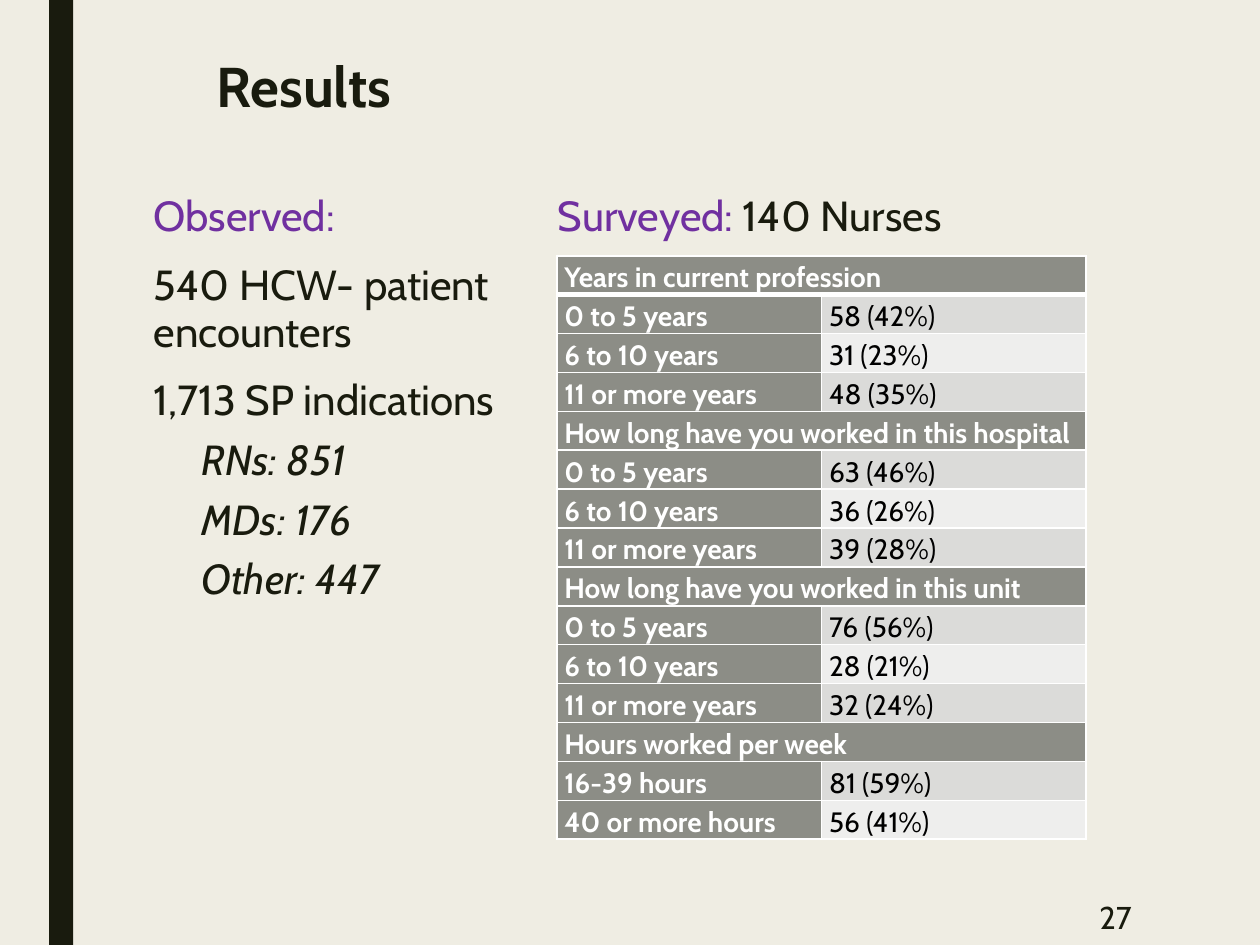
from lxml.etree import SubElement as Sub
from pptx import Presentation as Deck
from pptx.dml.color import RGBColor as RGB
from pptx.enum.shapes import MSO_SHAPE as Geo
from pptx.enum.text import MSO_ANCHOR as Anchor, PP_ALIGN as Align
from pptx.oxml.ns import qn
from pptx.util import Inches, Pt

INK, PLUM, WHITE, BLACK = "191B0E", "7030A0", "FFFFFF", "000000"
PAPER, GREY, DARK, LIGHT = "EFEDE3", "8C8D86", "DBDBD9", "EEEEED"
COLS, ROWS = 100, 75  # grid over the slide

# A row with no value is a heading across both columns
YEARS = ("0 to 5 years", "6 to 10 years", "11 or more years")
HOURS = ("16-39 hours", "40 or more hours")
GROUPS = [
    ("Years in current profession", YEARS, ("58 (42%)", "31 (23%)", "48 (35%)")),
    ("How long have you worked in this hospital", YEARS,
     ("63 (46%)", "36 (26%)", "39 (28%)")),
    ("How long have you worked in this unit", YEARS,
     ("76 (56%)", "28 (21%)", "32 (24%)")),
    ("Hours worked per week", HOURS, ("81 (59%)", "56 (41%)")),
]


def paint(target, color):
    """Give a fill one solid colour."""
    target.solid()
    target.fore_color.rgb = RGB.from_string(color)


def write(para, text, size=24, color=INK, bold=False, italic=False, font="Cabin",
          line=None, before=None, after=None, align=None, indent=0):
    """Add a run to a paragraph and set its format."""
    run = para.add_run()
    run.text = text
    run.font.name, run.font.size = font, Pt(size)
    run.font.bold, run.font.italic = bold, italic
    paint(run.font.fill, color)
    para.line_spacing, para.alignment = line, align
    para.space_before = None if before is None else Pt(before)
    para.space_after = None if after is None else Pt(after)
    if indent:
        para.level = 1
        para._p.get_or_add_pPr().set("marL", str(Inches(indent)))


def edge(cell, top=1, base=1):
    """Draw white borders, widths in points, ahead of the cell's fill."""
    props = cell._tc.get_or_add_tcPr()
    sides = (("lnL", 1), ("lnR", 1), ("lnT", top), ("lnB", base))
    for spot, (side, width) in enumerate(sides):
        line = Sub(props, qn("a:" + side), w=str(Pt(width)))
        Sub(Sub(line, qn("a:solidFill")), qn("a:srgbClr"), val=WHITE)
        props.insert(spot, line)


class Page:
    """The current slide, its grid and its text style."""
    body = dict(line=0.94, before=10, after=2)
    sub = dict(line=0.94, before=5, after=2, italic=True, indent=0.38)

    def __init__(self, deck):
        self.wide, self.high = deck.slide_width, deck.slide_height
        self.slide = deck.slides.add_slide(deck.slide_layouts[6])
        paint(self.slide.background.fill, PAPER)

    def area(self, col, row, cols, rows):
        return (round(self.wide * col / COLS), round(self.high * row / ROWS),
                round(self.wide * cols / COLS), round(self.high * rows / ROWS))

    def bar(self, *area):
        shape = self.slide.shapes.add_shape(Geo.RECTANGLE, *self.area(*area))
        shape.shadow.inherit = False
        paint(shape.fill, INK)
        shape.line.fill.background()

    def text(self, area, paras, anchor=Anchor.TOP):
        """Each paragraph is a list of (text, format) runs."""
        frame = self.slide.shapes.add_textbox(*self.area(*area)).text_frame
        frame.word_wrap, frame.vertical_anchor = True, anchor
        for num, runs in enumerate(paras):
            para = frame.add_paragraph() if num else frame.paragraphs[0]
            for words, look in runs:
                write(para, words, **look)

    def table(self, area, rows):
        table = self.slide.shapes.add_table(len(rows), 2, *self.area(*area)).table
        for num, (label, value) in enumerate(rows):
            left, right = table.cell(num, 0), table.cell(num, 1)
            shade = DARK if num % 2 else LIGHT
            for cell, fill in ((left, GREY), (right, shade if value else GREY)):
                cell.margin_left = cell.margin_right = Inches(0.06)
                cell.margin_top = cell.margin_bottom = 0
                paint(cell.fill, fill)
                edge(cell, top=3 if num == 1 else 1, base=3 if num == 0 else 1)
            write(left.text_frame.paragraphs[0], label,
                  size=16, color=WHITE, bold=True, line=1.15)
            if value:
                write(right.text_frame.paragraphs[0], value,
                      size=16, color=BLACK, line=1.15)
            else:
                left.merge(right)


def main():
    deck = Deck()
    deck.slide_width, deck.slide_height = Inches(10), Inches(7.5)
    page = Page(deck)
    body, sub = page.body, page.sub
    plum = dict(body, color=PLUM)

    # Side bar and title
    page.bar(3.9, 0, 1.9, ROWS)
    page.text((16.2, 4.2, 64.7, 7.8),
              [[("Results", dict(size=32, bold=True, line=0.89))]])

    # Observed counts
    page.text((11.2, 14.9, 35.5, 44.7), [
        [("Observed:", plum)],
        [("540 HCW- patient encounters", body)],
        [("1,713 SP indications", body)],
        *([(words, sub)] for words in ("RNs: 851", "MDs: 176", "Other: 447")),
    ])

    # Survey heading and table
    page.text((43.3, 14.9, 41.4, 45.2),
              [[("Surveyed: ", plum), ("140 Nurses", body)]])
    rows = []
    for head, labels, values in GROUPS:
        rows += [(head, None), *zip(labels, values)]
    page.table((44.2, 20.3, 42, 3.09 * len(rows)), rows)

    # Page number
    page.text((77.7, 70.6, 13.1, 4.4),
              [[("27", dict(size=18, align=Align.RIGHT))]], Anchor.MIDDLE)

    deck.save("out.pptx")


if __name__ == "__main__":
    main()
